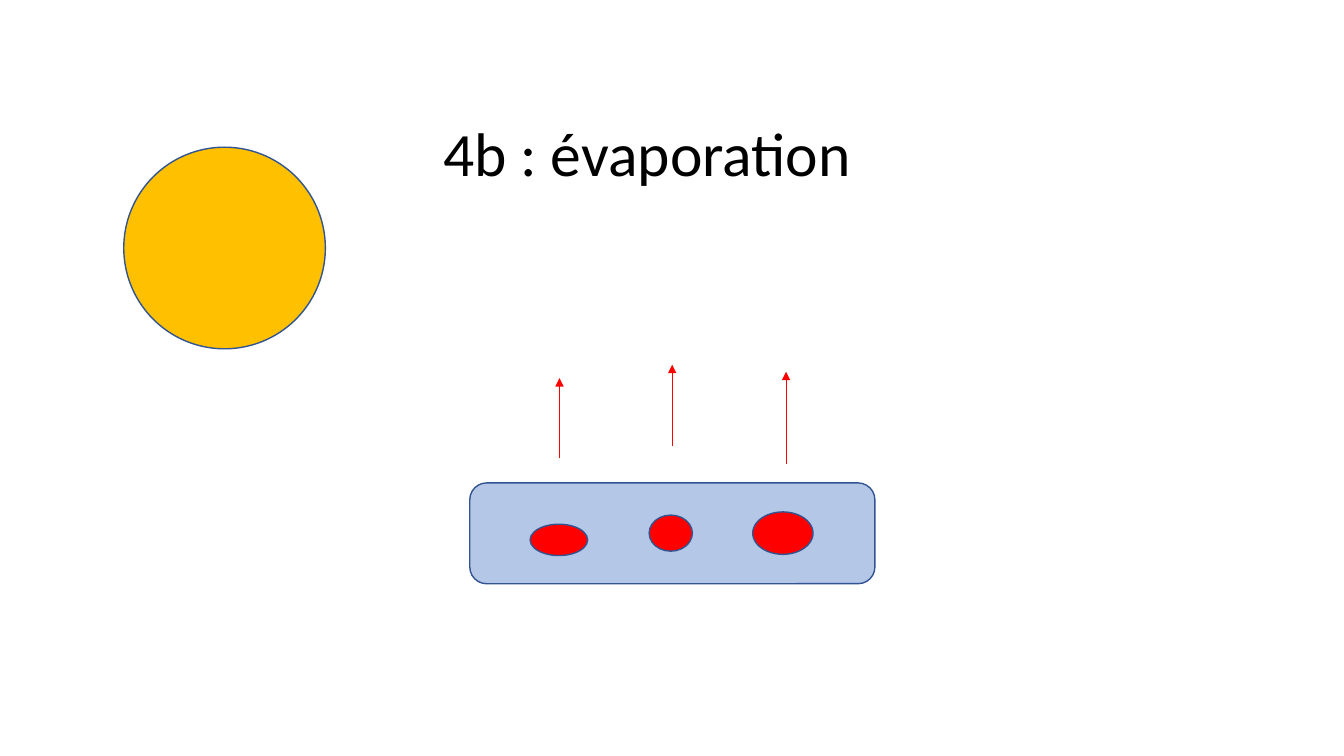
from dataclasses import dataclass

from lxml import etree
from pptx import Presentation
from pptx.dml.color import RGBColor
from pptx.enum.shapes import MSO_CONNECTOR, MSO_SHAPE
from pptx.enum.text import MSO_AUTO_SIZE
from pptx.oxml.ns import qn
from pptx.slide import Slide
from pptx.util import Cm, Pt

ELLIPSE = MSO_SHAPE.OVAL
ROUNDED = MSO_SHAPE.ROUNDED_RECTANGLE
STRAIGHT = MSO_CONNECTOR.STRAIGHT
FIT_SHAPE = MSO_AUTO_SIZE.SHAPE_TO_FIT_TEXT

OUTLINE = "325491"
WATER = "B4C7E7"
HEAT = "FF0000"
SUN = "FFC000"


@dataclass(frozen=True)
class Body:
    """A filled shape, measured in centimetres."""
    kind: MSO_SHAPE
    left: float
    top: float
    width: float
    height: float
    fill: str


@dataclass(frozen=True)
class Vapour:
    """A rising arrow, measured in centimetres."""
    x: float
    bottom: float
    top: float


BODIES = [
    Body(ROUNDED, 11.84, 12.17, 10.21, 2.54, WATER),
    Body(ELLIPSE, 18.97, 12.9, 1.52, 1.07, HEAT),
    Body(ELLIPSE, 16.36, 12.98, 1.09, 0.91, HEAT),
    Body(ELLIPSE, 13.36, 13.21, 1.45, 0.79, HEAT),
    Body(ELLIPSE, 3.12, 3.71, 5.08, 5.08, SUN),
]
VAPOURS = [
    Vapour(16.94, 11.25, 9.19),
    Vapour(19.81, 11.68, 9.37),
    Vapour(14.1, 11.53, 9.53),
]


def color(value: str) -> RGBColor:
    return RGBColor.from_string(value)


def draw_body(slide: Slide, body: Body) -> None:
    shape = slide.shapes.add_shape(body.kind, Cm(body.left), Cm(body.top),
                                   Cm(body.width), Cm(body.height))
    shape.shadow.inherit = False
    shape.fill.solid()
    shape.fill.fore_color.rgb = color(body.fill)
    shape.line.color.rgb = color(OUTLINE)
    shape.line.width = Pt(1)


def draw_vapour(slide: Slide, vapour: Vapour) -> None:
    arrow = slide.shapes.add_connector(STRAIGHT, Cm(vapour.x), Cm(vapour.bottom),
                                       Cm(vapour.x), Cm(vapour.top))
    arrow.line.color.rgb = color(HEAT)
    arrow.line.width = Pt(0.5)
    etree.SubElement(arrow.line._get_or_add_ln(), qn("a:tailEnd"), type="triangle")
    etree.SubElement(arrow._element.spPr, qn("a:effectLst"))


def add_text(slide: Slide, text: str, *, left: float, top: float, width: float,
             height: float, size: float, font: str = "Calibri",
             fill: str = "000000") -> None:
    box = slide.shapes.add_textbox(Cm(left), Cm(top), Cm(width), Cm(height))
    frame = box.text_frame
    frame.word_wrap = True
    frame.auto_size = FIT_SHAPE
    run = frame.paragraphs[0].add_run()
    run.text = text
    run.font.name = font
    run.font.size = Pt(size)
    run.font.color.rgb = color(fill)


def main() -> None:
    deck = Presentation()
    deck.slide_width, deck.slide_height = Cm(33.87), Cm(19.05)
    slide = deck.slides.add_slide(deck.slide_layouts[6])

    # Water, heated drops and sun
    for body in BODIES:
        draw_body(slide, body)

    # Rising vapour
    for vapour in VAPOURS:
        draw_vapour(slide, vapour)

    # Title
    add_text(slide, "4b : évaporation", left=10.92, top=2.77, width=15.44,
             height=2.13, size=44)

    deck.save("out.pptx")


if __name__ == "__main__":
    main()
